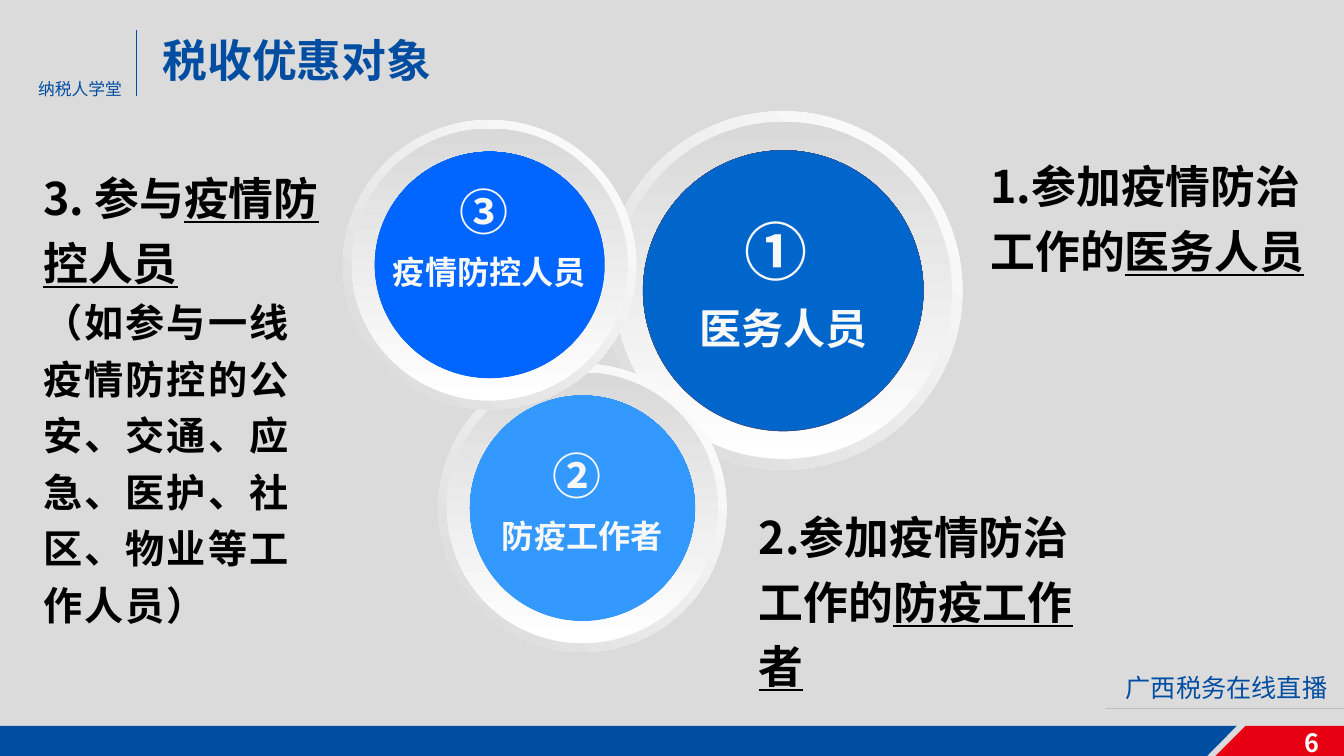
from lxml import etree
from pptx import Presentation
from pptx.dml.color import RGBColor
from pptx.enum.shapes import MSO_CONNECTOR, MSO_SHAPE
from pptx.enum.text import MSO_ANCHOR, MSO_AUTO_SIZE, PP_ALIGN
from pptx.oxml.ns import qn
from pptx.util import Cm, Pt

FONT = "Noto Sans CJK SC"
BACKGROUND = RGBColor(0xDB, 0xDB, 0xDB)
NAVY = RGBColor(0x00, 0x4D, 0xA1)
RED = RGBColor(0xE6, 0x00, 0x12)
HAIRLINE = RGBColor(0xBF, 0xBF, 0xBF)
DISC_EDGE = RGBColor(0x32, 0x54, 0x91)
RING_LIGHT = RGBColor(0xFF, 0xFF, 0xFF)
RING_DARK = RGBColor(0xD9, 0xD9, 0xD9)
LABEL = RGBColor(0xF8, 0xF8, 0xF8)
WHITE = RGBColor(0xFF, 0xFF, 0xFF)
BLACK = RGBColor(0x00, 0x00, 0x00)

# Content; all lengths are centimetres
WIDTH, HEIGHT = 33.87, 19.05
TITLE = "税收优惠对象"
# left, top, width, height, text, size
MASTER_TEXTS = [
    (0.71, 1.85, 2.74, 0.76, "纳税人学堂", 12),
    (28.12, 16.81, 5.74, 1.02, "广西税务在线直播", 18),
]
PAGE_NUMBER = "6"
BANDS = [
    (NAVY, [(0, 18.29), (31.17, 18.29), (30.42, HEIGHT), (0, HEIGHT)]),
    (RED, [(31.39, 18.29), (WIDTH, 18.29), (WIDTH, HEIGHT), (30.63, HEIGHT)]),
]
RULES = [
    (3.43, 0.76, 3.43, 2.41, NAVY),
    (27.86, 17.86, WIDTH, 17.86, HAIRLINE),
]
# centre x, centre y, outer width, outer height, fill, edge,
# label top, label height, (text, size) lines
DIALS = [
    (19.74, 7.32, 9.03, 9.03, RGBColor(0x00, 0x66, 0xCC), DISC_EDGE,
     4.65, 4.42, [("① ", 45), ("医务人员", 30)]),
    (14.68, 12.8, 7.26, 7.26, RGBColor(0x33, 0x99, 0xFF), None,
     10.67, 3.48, [("② ", 35), ("防疫工作者", 23)]),
    (12.34, 6.67, 7.39, 7.29, RGBColor(0x00, 0x66, 0xFF), None,
     4.01, 4.24, [("③ ", 35), ("疫情防控人员", 23)]),
]
DISC_SHARE, INNER_SHARE, LABEL_SHARE = 0.785, 0.94, 1.05
# share of outer size, ring thickness, gradient angle (counter-clockwise)
RINGS = [(1, 0.101, 225), (INNER_SHARE, 0.081, 90)]

# left, top, width, height, lead, underlined words, remark
NOTES = [
    (24.71, 3.61, 8.43, 4.9, "1.参加疫情防治工作的", "医务人员", None),
    (18.87, 12.45, 9.42, 4.9, "2.参加疫情防治工作的", "防疫工作者", None),
    (0.84, 3.91, 7.52, 13.44, "3. 参与", "疫情防控人员",
     "（如参与一线疫情防控的公安、交通、应急、医护、社区、物业等工作人员）"),
]


def add_span(para, text, size, color, bold=False, underline=None, spacing=None):
    span = para.add_run()
    span.text = text
    font = span.font
    font.name, font.size, font.bold = FONT, Pt(size), bold
    font.underline = underline
    font.color.rgb = color
    properties = span._r.get_or_add_rPr()
    etree.SubElement(properties, qn("a:ea")).set("typeface", FONT)
    if spacing:
        properties.set("spc", str(int(spacing * 100)))


def add_frame(shapes, left, top, width, height):
    box = shapes.add_textbox(Cm(left), Cm(top), Cm(width), Cm(height))
    box.text_frame.word_wrap = True
    return box.text_frame


def add_round(shapes, kind, center_x, center_y, width, height):
    shape = shapes.add_shape(kind, Cm(center_x - width / 2), Cm(center_y - height / 2),
                             Cm(width), Cm(height))
    shape.shadow.inherit = False
    shape.line.fill.background()
    return shape


def add_dial(page, center_x, center_y, width, height, fill, edge,
             label_top, label_height, lines):
    shapes = page.shapes.add_group_shape().shapes
    disc = add_round(shapes, MSO_SHAPE.OVAL, center_x, center_y,
                     width * DISC_SHARE, height * DISC_SHARE)
    disc.fill.solid()
    disc.fill.fore_color.rgb = fill
    if edge is not None:
        disc.line.color.rgb = edge
        disc.line.width = Pt(1)
    for share, thickness, angle in RINGS:
        ring = add_round(shapes, MSO_SHAPE.DONUT, center_x, center_y,
                         width * share, height * share)
        ring.adjustments[0] = thickness
        ring.fill.gradient()
        ring.fill.gradient_angle = angle
        for stop, position, color in zip(ring.fill.gradient_stops, (0, 1),
                                         (RING_LIGHT, RING_DARK)):
            stop.position = position
            stop.color.rgb = color
    label_width = width * LABEL_SHARE
    frame = add_frame(shapes, center_x - label_width / 2, label_top,
                      label_width, label_height)
    for index, (text, size) in enumerate(lines):
        para = frame.add_paragraph() if index else frame.paragraphs[0]
        para.alignment, para.line_spacing = PP_ALIGN.CENTER, 1.3
        add_span(para, text, size, LABEL, bold=True)


def main():
    deck = Presentation()
    deck.slide_width, deck.slide_height = Cm(WIDTH), Cm(HEIGHT)
    page = deck.slides.add_slide(deck.slide_layouts[5])
    page.background.fill.solid()
    page.background.fill.fore_color.rgb = BACKGROUND

    # Footer bands and thin rules
    for color, points in BANDS:
        corners = [(Cm(x), Cm(y)) for x, y in points]
        builder = page.shapes.build_freeform(*corners[0])
        builder.add_line_segments(corners[1:], close=True)
        band = builder.convert_to_shape()
        band.shadow.inherit = False
        band.fill.solid()
        band.fill.fore_color.rgb = color
        band.line.fill.background()
    for x1, y1, x2, y2, color in RULES:
        rule = page.shapes.add_connector(MSO_CONNECTOR.STRAIGHT,
                                         Cm(x1), Cm(y1), Cm(x2), Cm(y2))
        rule.line.color.rgb = color
        rule.line.width = Pt(0.5)
        etree.SubElement(rule._element.spPr, qn("a:effectLst"))
    for left, top, width, height, text, size in MASTER_TEXTS:
        frame = add_frame(page.shapes, left, top, width, height)
        add_span(frame.paragraphs[0], text, size, NAVY)

    # Three ringed discs
    for dial in DIALS:
        add_dial(page, *dial)

    # Title
    title = page.shapes.title
    title.left, title.top, title.width, title.height = Cm(3.84), Cm(0.69), Cm(11.15), Cm(1.63)
    frame = title.text_frame
    frame.auto_size, frame.vertical_anchor = MSO_AUTO_SIZE.NONE, MSO_ANCHOR.TOP
    frame.paragraphs[0].alignment = PP_ALIGN.LEFT
    add_span(frame.paragraphs[0], TITLE, 32, NAVY, bold=True)

    # Explanations around the discs
    for left, top, width, height, lead, words, remark in NOTES:
        frame = add_frame(page.shapes, left, top, width, height)
        para = frame.paragraphs[0]
        para.line_spacing = 1.2
        add_span(para, lead, 32, BLACK, bold=True)
        add_span(para, words, 32, BLACK, bold=True, underline=True)
        if remark:
            para = frame.add_paragraph()
            para.line_spacing = 1.2
            add_span(para, remark, 28, BLACK, bold=True, spacing=1.5)

    # Page number
    frame = add_frame(page.shapes, 25.88, 18.19, 7.62, 1.02)
    frame.vertical_anchor = MSO_ANCHOR.MIDDLE
    frame.paragraphs[0].alignment = PP_ALIGN.RIGHT
    add_span(frame.paragraphs[0], PAGE_NUMBER, 18, WHITE, bold=True)

    deck.save("out.pptx")


if __name__ == "__main__":
    main()
